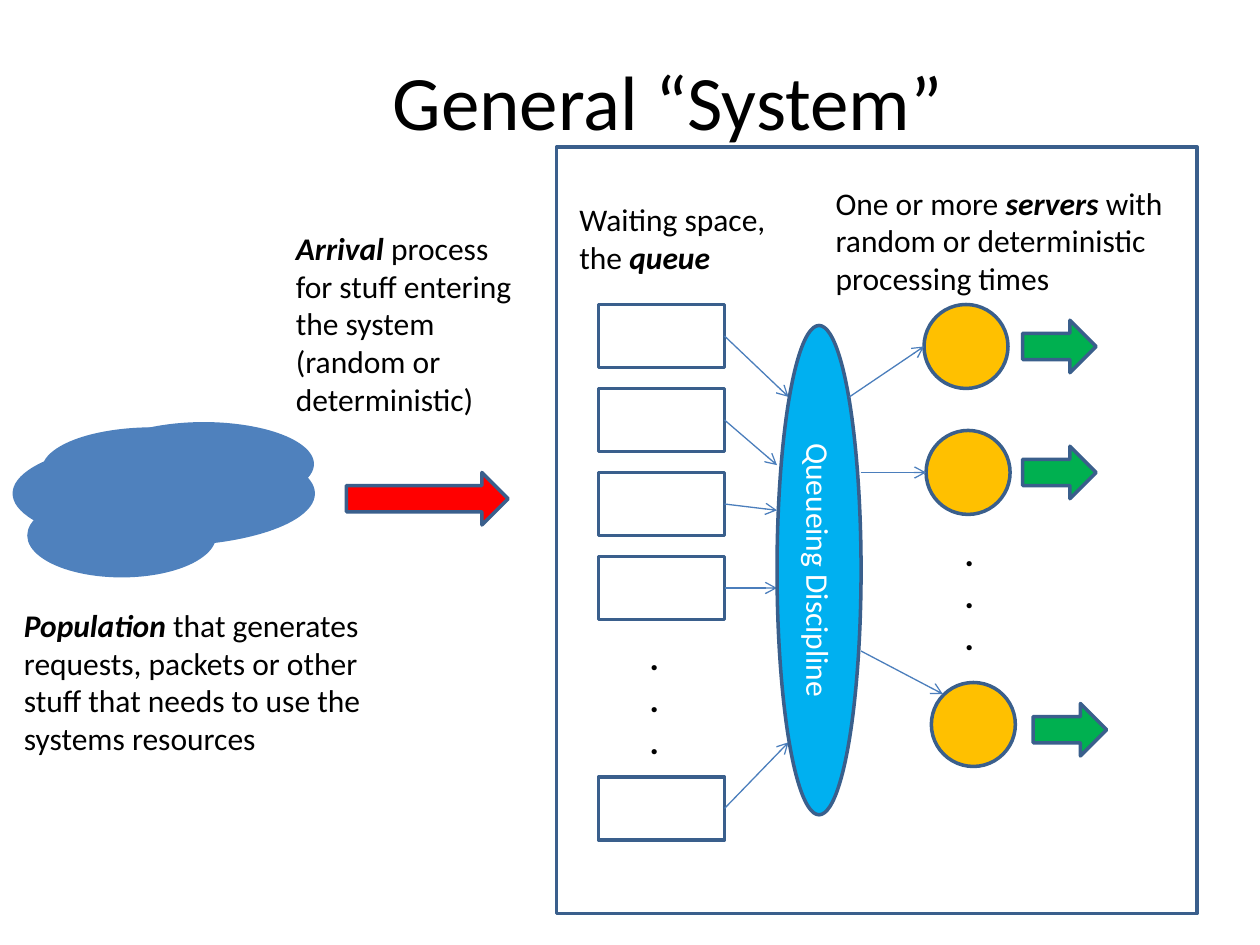
from lxml.etree import SubElement
from pptx import Presentation
from pptx.dml.color import RGBColor
from pptx.enum.shapes import MSO_CONNECTOR as Line, MSO_SHAPE as Shape
from pptx.enum.text import MSO_ANCHOR as Anchor, PP_ALIGN as Align
from pptx.oxml.ns import qn
from pptx.util import Inches, Pt

COLORS = {
    "text": "000000", "white": "FFFFFF", "outline": "3A5F8C",
    "connector": "4B7EBC", "population": "4F81BD", "arrival": "FF0000",
    "server": "FFC000", "departure": "00B050", "discipline": "00B0F0",
}
FONT = "Calibri"
CELLS_PER_INCH = 12


def color(name):
    return RGBColor.from_string(COLORS[name])


def grid(*cells):
    return [Inches(c / CELLS_PER_INCH) for c in cells]


def set_font(font, size, name="text"):
    font.name = FONT
    font.size = Pt(size)
    font.color.rgb = color(name)


def add_shape(s, kind, box, fill=None, outlined=True):
    sp = s.shapes.add_shape(kind, *grid(*box))
    sp.shadow.inherit = False
    if fill:
        sp.fill.solid()
        sp.fill.fore_color.rgb = color(fill)
    else:
        sp.fill.background()
    if outlined:
        sp.line.color.rgb = color("outline")
        sp.line.width = Pt(2)
    else:
        sp.line.fill.background()
    return sp


def add_label(s, box, *parts):
    tf = s.shapes.add_textbox(*grid(*box)).text_frame
    tf.word_wrap = True
    p = tf.paragraphs[0]
    set_font(p.font, 18)
    for text, emphasized in parts:
        r = p.add_run()
        r.text = text
        if emphasized:
            r.font.bold = r.font.italic = True


def add_dots(s, x, y):
    tf = s.shapes.add_textbox(*grid(x, y, 3.4, 13.3)).text_frame
    tf.word_wrap = False
    tf.text = "\n".join("...")
    for p in tf.paragraphs:
        set_font(p.font, 20)
        p.font.bold = True


def add_arrow(s, start, end):
    cxn = s.shapes.add_connector(Line.STRAIGHT, *grid(*start, *end))
    cxn.line.color.rgb = color("connector")
    cxn.line.width = Pt(0.75)
    SubElement(cxn.line._get_or_add_ln(), qn("a:tailEnd"), type="arrow")
    SubElement(cxn._element.spPr, qn("a:effectLst"))


def add_title(s, text):
    sp = s.shapes.title
    sp.left, sp.top, sp.width, sp.height = grid(9.6, 2, 108, 15)
    tf = sp.text_frame
    tf.text = text
    tf.vertical_anchor = Anchor.MIDDLE
    p = tf.paragraphs[0]
    p.alignment = Align.CENTER
    set_font(p.font, 44)


def add_population(s):
    for box in [(2.6, 47, 18, 8), (1.2, 42, 28.8, 10),
                (4, 40.7, 21, 8), (8.9, 40.2, 21, 8)]:
        add_shape(s, Shape.OVAL, box, "population", outlined=False)
    add_label(s, (1.1, 57.1, 36.1, 15.7), ("Population", True),
              (" that generates requests, packets or other stuff that needs"
               " to use the systems resources", False))


def add_arrival(s):
    add_shape(s, Shape.RIGHT_ARROW, (33, 45, 15.4, 5), "arrival")
    add_label(s, (27, 21.2, 23.2, 19.4), ("Arrival", True),
              (" process for stuff entering the system"
               " (random or deterministic)", False))


def add_queue(s):
    tops = [29 + 8 * i for i in range(4)] + [74]
    ends = [(75.1, 37.8), (74, 44.3), (74, 48.6), (74, 56), (75.1, 70.7)]
    for top, end in zip(tops, ends):
        add_shape(s, Shape.RECTANGLE, (57, top, 12, 6), "white")
        add_arrow(s, (69, top + 3), end)
    add_dots(s, 60.7, 59.9)
    add_label(s, (54, 18.5, 21, 8.5),
              ("Waiting space, the ", False), ("queue", True))


def add_discipline(s):
    sp = add_shape(s, Shape.OVAL, (54.7, 50.3, 46.6, 8), "discipline")
    sp.rotation = 90
    tf = sp.text_frame
    tf.text = "Queueing Discipline"
    tf.vertical_anchor = Anchor.MIDDLE
    p = tf.paragraphs[0]
    p.alignment = Align.CENTER
    set_font(p.font, 18, "white")


def add_servers(s):
    servers = [
        ((88, 29), (97.4, 30.5), (80.9, 37.8), (88, 33)),
        ((88.2, 41), (97.4, 42.5), (82, 45), (88.2, 45)),
        ((88.7, 65), (98.4, 67), (82, 62), (89.8, 66.1)),
    ]
    for circle, departure, start, end in servers:
        add_shape(s, Shape.OVAL, (*circle, 8, 8), "server")
        add_shape(s, Shape.RIGHT_ARROW, (*departure, 7, 5), "departure")
        add_arrow(s, start, end)
    add_dots(s, 90.7, 50)
    add_label(s, (78.4, 16.9, 34.7, 12.1), ("One or more ", False),
              ("servers", True),
              (" with random or deterministic processing times", False))


def main():
    prs = Presentation()
    prs.slide_width, prs.slide_height = grid(120, 90)
    s = prs.slides.add_slide(prs.slide_layouts[5])
    add_title(s, "General “System”")
    add_population(s)
    add_arrival(s)
    add_shape(s, Shape.RECTANGLE, (53, 14, 61, 73))
    add_queue(s)
    add_discipline(s)
    add_servers(s)
    prs.save("out.pptx")


if __name__ == "__main__":
    main()
